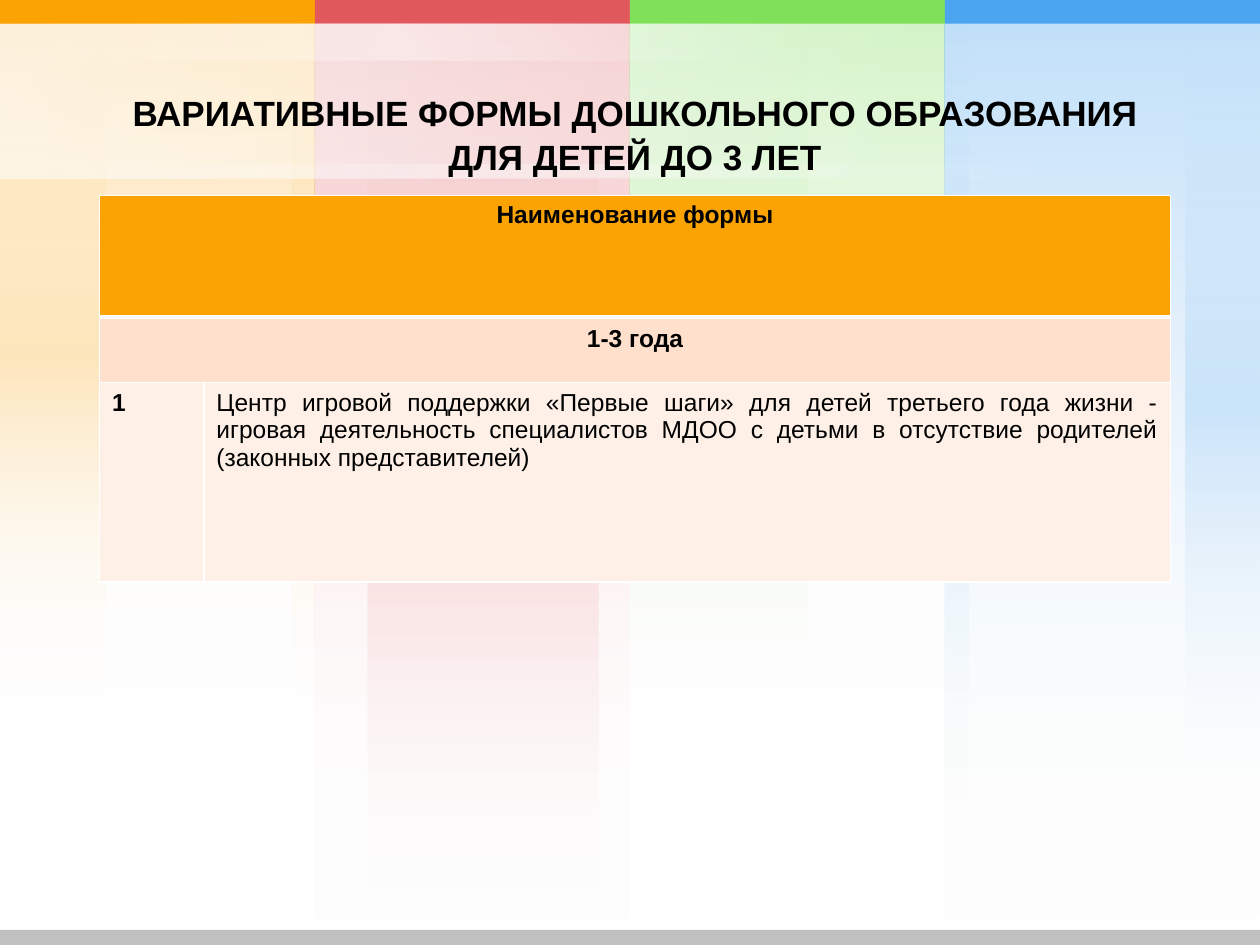
from dataclasses import dataclass

from pptx import Presentation
from pptx.dml.color import RGBColor
from pptx.enum.shapes import MSO_SHAPE
from pptx.enum.text import MSO_ANCHOR, MSO_AUTO_SIZE, PP_ALIGN
from pptx.oxml import parse_xml
from pptx.oxml.ns import nsdecls
from pptx.util import Pt

COLORS = {
    "orange": "FCA304", "red": "E1595C", "green": "80E05A", "blue": "4BA5EF",
    "white": "FFFFFF", "gray": "C0C0C0", "black": "000000",
    "age_row": "FEE0CC", "form_row": "FEF0E7",
}
FONT = "Arial"
COLUMN_W = 180
BAR_H = 13.6


@dataclass(frozen=True)
class Veil:
    """A translucent strip; a glow peaks midway, otherwise it fades from its start."""
    color: str
    left: float
    top: float
    width: float
    height: float
    glow: bool = False
    opacity: int = 20
    rotation: int = 0


@dataclass(frozen=True)
class TableCell:
    row: int
    col: int
    text: str
    fill: str
    align: PP_ALIGN = PP_ALIGN.CENTER
    bold: bool = True
    spacing: float = 1.0
    span: int = 1


COLUMN_VEILS = [
    Veil("red", 180, 0, COLUMN_W, 540),
    Veil("red", 210, 0, 132, 540, glow=True),
    Veil("red", 180, 0, COLUMN_W, 540),
    Veil("green", 360, 0, COLUMN_W, 405),
    Veil("green", 360, 0, 101.5, 405, glow=True),
    Veil("green", 360, 0, COLUMN_W, 405),
    Veil("blue", 540, 0, 13.7, 459, glow=True),
    Veil("blue", 540, 0, COLUMN_W, 538),
    Veil("blue", 677.5, 0, 42.5, 459, glow=True),
    Veil("blue", 540, 0, COLUMN_W, 538),
    Veil("orange", 0, 0, COLUMN_W, 405),
    Veil("orange", 167, 0, 13, 405, glow=True),
    Veil("orange", 0, 0, 60.5, 405, glow=True),
    Veil("orange", 0, 0, COLUMN_W, 405),
]
HEADER_SHEEN = Veil("white", 226.8, -212.4, 87.8, 540.7, opacity=35, rotation=270)
HEADER_VEILS = [
    Veil("white", 299.5, -205.2, 7.2, 606.2, True, 35, 270),
    HEADER_SHEEN,
    Veil("white", 220.3, -206.6, 20.9, 461.5, True, 35, 270),
    HEADER_SHEEN,
]
CELLS = [
    TableCell(0, 0, "Наименование формы", "orange", span=2),
    TableCell(1, 0, "1-3 года", "age_row", spacing=1.07, span=2),
    TableCell(2, 0, "1", "form_row", PP_ALIGN.LEFT),
    TableCell(2, 1, "Центр игровой поддержки «Первые шаги» для детей третьего года жизни - "
              "игровая деятельность специалистов МДОО с детьми в отсутствие родителей "
              "(законных представителей)", "form_row", PP_ALIGN.JUSTIFY, bold=False),
]


def rgb(name: str) -> RGBColor:
    return RGBColor.from_string(COLORS[name])


def add_rect(slide, left: float, top: float, width: float, height: float):
    rect = slide.shapes.add_shape(
        MSO_SHAPE.RECTANGLE, Pt(left), Pt(top), Pt(width), Pt(height))
    rect.shadow.inherit = False
    rect.line.fill.background()
    return rect


def add_bar(slide, color: str, *frame: float) -> None:
    bar = add_rect(slide, *frame)
    bar.fill.solid()
    bar.fill.fore_color.rgb = rgb(color)


def add_veil(slide, veil: Veil) -> None:
    rect = add_rect(slide, veil.left, veil.top, veil.width, veil.height)
    rect.rotation = veil.rotation
    stops = [(0, veil.color, veil.opacity), (100, "white", 0)]
    if veil.glow:
        stops = [(0, "white", 0), (50, veil.color, veil.opacity), (100, "white", 0)]
    stop_xml = "".join(
        f'<a:gs pos="{pos * 1000}"><a:srgbClr val="{COLORS[color]}">'
        f'<a:alpha val="{alpha * 1000}"/></a:srgbClr></a:gs>'
        for pos, color, alpha in stops)
    rect.fill.gradient()
    rect.fill.gradient_angle = 270  # counter-clockwise, so top to bottom
    gradient = rect._element.spPr.gradFill
    gradient.replace(gradient.gsLst, parse_xml(
        f'<a:gsLst {nsdecls("a")}>{stop_xml}</a:gsLst>'))


def write_text(frame, text: str, *, size: float, bold: bool = True,
               align: PP_ALIGN = PP_ALIGN.CENTER, spacing: float = 1.0) -> None:
    frame.word_wrap = True
    paragraph = frame.paragraphs[0]
    paragraph.alignment = align
    paragraph.line_spacing = spacing
    run = paragraph.add_run()
    run.text = text
    run.font.name = FONT
    run.font.size = Pt(size)
    run.font.bold = bold
    run.font.color.rgb = rgb("black")


def set_borders(cell, bottom: float = 1) -> None:
    """White lines on all sides, placed ahead of the cell fill as the schema asks."""
    properties = cell._tc.get_or_add_tcPr()
    for index, (side, width) in enumerate(
            [("lnL", 1), ("lnR", 1), ("lnT", 1), ("lnB", bottom)]):
        properties.insert(index, parse_xml(
            f'<a:{side} {nsdecls("a")} w="{Pt(width)}"><a:solidFill>'
            f'<a:srgbClr val="{COLORS["white"]}"/></a:solidFill></a:{side}>'))


def add_forms_table(slide) -> None:
    widths, heights = [59.6, 552.4], [69.6, 37.4, 114]
    table = slide.shapes.add_table(
        len(heights), len(widths), Pt(56.9), Pt(111.6),
        Pt(sum(widths)), Pt(sum(heights))).table
    for column, width in zip(table.columns, widths):
        column.width = Pt(width)
    for row, height in zip(table.rows, heights):
        row.height = Pt(height)
    for item in CELLS:
        cell = table.cell(item.row, item.col)
        if item.span > 1:
            cell.merge(table.cell(item.row, item.col + item.span - 1))
        write_text(cell.text_frame, item.text, size=14, bold=item.bold,
                   align=item.align, spacing=item.spacing)
        for col in range(item.col, item.col + item.span):
            part = table.cell(item.row, col)
            part.fill.solid()
            part.fill.fore_color.rgb = rgb(item.fill)
            set_borders(part, bottom=3 if item.row == 0 else 1)


def place_title(slide) -> None:
    title = slide.shapes.title
    slide.shapes._spTree.append(title._element)  # bring in front of the backdrop
    title.left, title.top, title.width, title.height = (
        Pt(56.9), Pt(37.4), Pt(612), Pt(90.7))
    frame = title.text_frame
    frame.auto_size = MSO_AUTO_SIZE.NONE
    frame.vertical_anchor = MSO_ANCHOR.BOTTOM
    frame.margin_bottom = Pt(26.8)
    write_text(frame, "ВАРИАТИВНЫЕ ФОРМЫ ДОШКОЛЬНОГО ОБРАЗОВАНИЯ ДЛЯ ДЕТЕЙ ДО 3 ЛЕТ",
               size=20, spacing=1.04)


def main() -> None:
    deck = Presentation()
    deck.slide_width, deck.slide_height = Pt(720), Pt(540)
    slide = deck.slides.add_slide(deck.slide_layouts[5])
    for veil in COLUMN_VEILS:
        add_veil(slide, veil)
    for index, color in enumerate(["orange", "red", "green", "blue"]):
        add_bar(slide, color, index * COLUMN_W, 0, COLUMN_W, BAR_H)
    for veil in HEADER_VEILS:
        add_veil(slide, veil)
    add_bar(slide, "gray", 0, 531.4, 720, 8.6)
    place_title(slide)
    add_forms_table(slide)
    deck.save("out.pptx")


if __name__ == "__main__":
    main()
